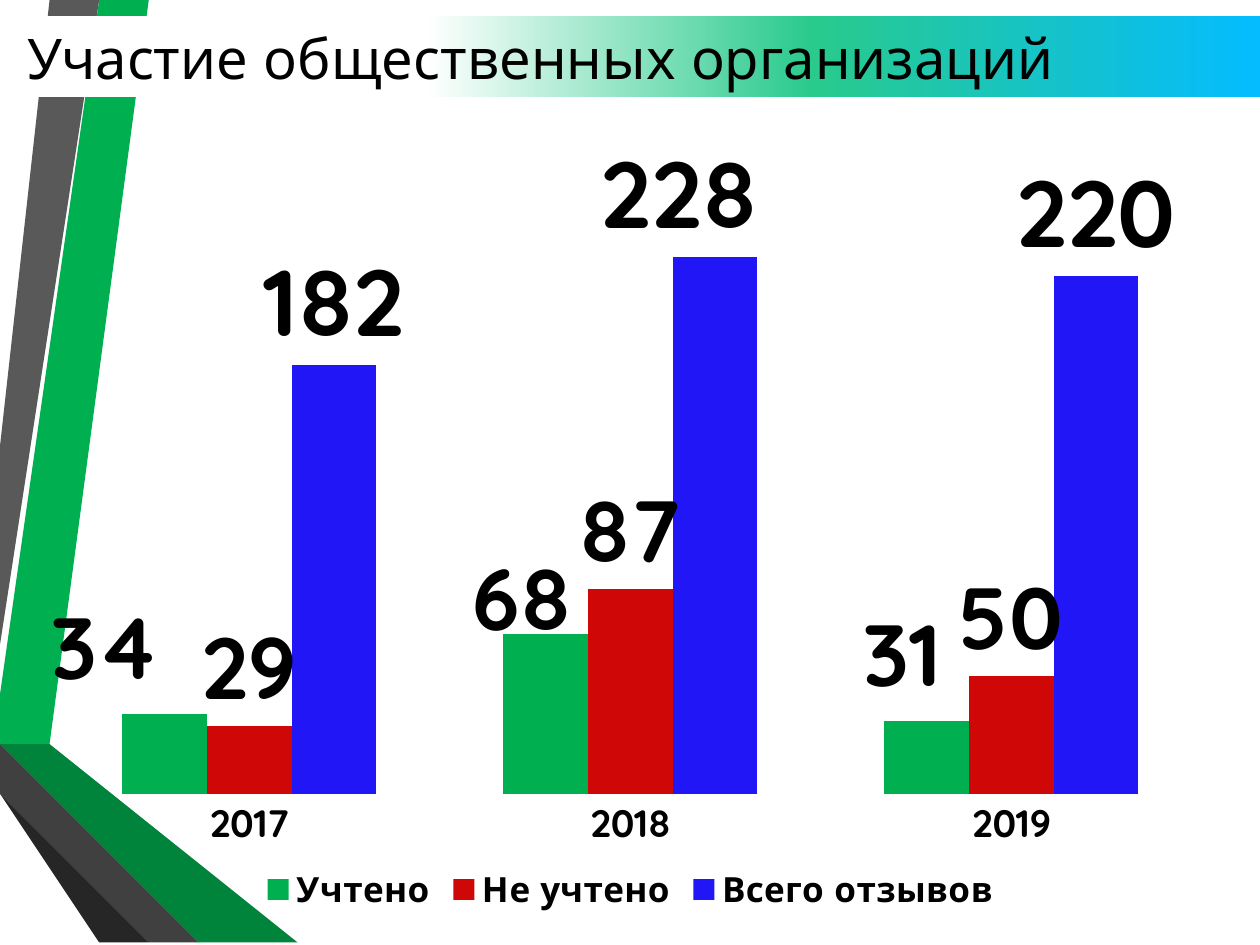
from copy import deepcopy
from dataclasses import dataclass

from pptx import Presentation
from pptx.chart.data import CategoryChartData
from pptx.dml.color import RGBColor
from pptx.enum.chart import (XL_CHART_TYPE, XL_LABEL_POSITION,
                             XL_LEGEND_POSITION, XL_TICK_MARK)
from pptx.enum.text import MSO_ANCHOR, MSO_AUTO_SIZE, PP_ALIGN
from pptx.oxml import parse_xml
from pptx.oxml.ns import nsdecls
from pptx.util import Cm, Pt


@dataclass(frozen=True)
class Theme:
    """Colours, font and type sizes of the slide."""
    font: str = "Quicksand"
    ink: str = "000000"
    green: str = "00B050"
    red: str = "CF0707"
    blue: str = "2116F6"
    fade: tuple = ((0.33, "FFFFFF"), (0.64, "29CA8C"), (1, "04BCFF"))
    head: int = 32
    axis: int = 22
    key: int = 20
    small: int = 50
    large: int = 54


THEME = Theme()

BANDS = (
    (THEME.green, ((0, 13.82), (0, 14.61), (0.56, 14.71), (2.97, 0), (2.26, 0))),
    ("595959", ((2.11, 0), (1.4, 0), (0, 8.53), (0, 12.85))),
    ("262626", ((0, 15.72), (0, 15.77), (2.36, 19.05), (2.51, 19.05))),
    ("005828", ((0, 14.71), (0, 14.73), (3.96, 19.05), (4.14, 19.05))),
    ("00843C", ((0, 14.71), (4.14, 19.05), (5.92, 19.05), (0.56, 14.71), (0, 14.61))),
    ("404040", ((0, 15.72), (2.51, 19.05), (3.84, 19.05), (0, 14.88))),
)

YEARS = ("2017", "2018", "2019")
SERIES = (
    ("Учтено", (34, 68, 31), THEME.green, THEME.small,
     {0: (-0.05, -0.01), 1: (-0.02, 0.03), 2: (-0.02, -0.01)}),
    ("Не учтено", (29, 87, 50), THEME.red, THEME.small, {}),
    ("Всего отзывов", (182, 228, 220), THEME.blue, THEME.large, {1: (-0.03, 0)}),
)


def style(font, size, bold=False):
    """Give a font the theme's face and ink."""
    font.name, font.size, font.bold = THEME.font, Pt(size), bold
    font.color.rgb = RGBColor.from_string(THEME.ink)


def layout(x, y, size=None):
    """Return a manual chart layout in fractions of the chart."""
    parts = [("x", x), ("y", y)]
    if size:
        parts = [("layoutTarget", "inner"), ("xMode", "edge"), ("yMode", "edge"),
                 *parts, ("w", size[0]), ("h", size[1])]
    body = "".join(f'<c:{tag} val="{val}"/>' for tag, val in parts)
    return parse_xml(f'<c:layout {nsdecls("c")}><c:manualLayout>{body}'
                     '</c:manualLayout></c:layout>')


def add_bands(slide, left, top):
    """Draw the folded bands along the left edge."""
    for color, points in BANDS:
        pen = slide.shapes.build_freeform(*points[0], scale=Cm(1))
        pen.add_line_segments(points[1:], close=True)
        band = pen.convert_to_shape(left, top)
        band.shadow.inherit = False
        band.fill.solid()
        band.fill.fore_color.rgb = RGBColor.from_string(color)
        band.line.fill.background()


def add_title(slide, text, left, top, width, height):
    """Place the title on its fading strip, above the bands."""
    title = slide.shapes.title
    title.left, title.top, title.width, title.height = left, top, width, height
    title.element.getparent().append(title.element)
    title.fill.gradient()
    title.fill.gradient_angle = 0
    stops = title.element.xpath(".//a:gsLst")[0]
    stops.append(deepcopy(stops[-1]))
    for stop, (place, color) in zip(title.fill.gradient_stops, THEME.fade):
        stop.position = place
        stop.color.rgb = RGBColor.from_string(color)
    frame = title.text_frame
    frame.text = text
    frame.word_wrap = True
    frame.auto_size = MSO_AUTO_SIZE.NONE
    frame.vertical_anchor = MSO_ANCHOR.MIDDLE
    line = frame.paragraphs[0]
    line.alignment = PP_ALIGN.LEFT
    style(line.font, THEME.head)


def add_bars(slide, left, top, width, height):
    """Add the column chart with its shifted labels."""
    data = CategoryChartData()
    data.categories = YEARS
    for name, vals, *_ in SERIES:
        data.add_series(name, vals)
    chart = slide.shapes.add_chart(XL_CHART_TYPE.COLUMN_CLUSTERED,
                                   left, top, width, height, data).chart
    style(chart.font, THEME.key, True)
    chart.has_title = False
    chart.has_legend = True
    chart.legend.position = XL_LEGEND_POSITION.BOTTOM
    chart.legend.include_in_layout = False
    style(chart.legend.font, THEME.key, True)

    years, scale = chart.category_axis, chart.value_axis
    years.major_tick_mark = XL_TICK_MARK.NONE
    years.format.line.fill.background()
    style(years.tick_labels.font, THEME.axis, True)
    scale.minimum_scale, scale.maximum_scale = 0, 250
    scale.has_major_gridlines = False
    scale.visible = False

    plot = chart.plots[0]
    plot.gap_width, plot.overlap = 150, 0
    plot.vary_by_categories = False
    for rank, (bars, (_, _, color, size, shifts)) in enumerate(zip(plot.series, SERIES), 1):
        bars.format.fill.solid()
        bars.format.fill.fore_color.rgb = RGBColor.from_string(color)
        bars.invert_if_negative = False
        labels = bars.data_labels
        labels.show_value = True
        labels.position = XL_LABEL_POSITION.OUTSIDE_END
        style(labels.font, size, True)
        for spot, shift in shifts.items():
            label = bars.points[spot].data_label
            label.position = XL_LABEL_POSITION.OUTSIDE_END
            style(label.font, size, True)
            query = f".//c:ser[{rank}]/c:dLbls/c:dLbl[c:idx/@val={spot}]"
            chart.element.xpath(query)[0].insert(1, layout(*shift))

    area = chart.element.xpath(".//c:plotArea")[0]
    for old in area.xpath("./c:layout"):
        area.remove(old)
    area.insert(0, layout(0.02, 0.08, (0.96, 0.76)))


def main():
    """Build and save the slide."""
    deck = Presentation()
    deck.slide_width, deck.slide_height = Cm(25.4), Cm(19.05)
    slide = deck.slides.add_slide(deck.slide_layouts[5])
    add_bands(slide, Cm(0), Cm(0))
    add_title(slide, "Участие общественных организаций",
              Cm(0.3), Cm(0.33), Cm(25.1), Cm(1.63))
    add_bars(slide, Cm(0.71), Cm(2.72), Cm(24), Cm(15.8))
    deck.save("out.pptx")


if __name__ == "__main__":
    main()
